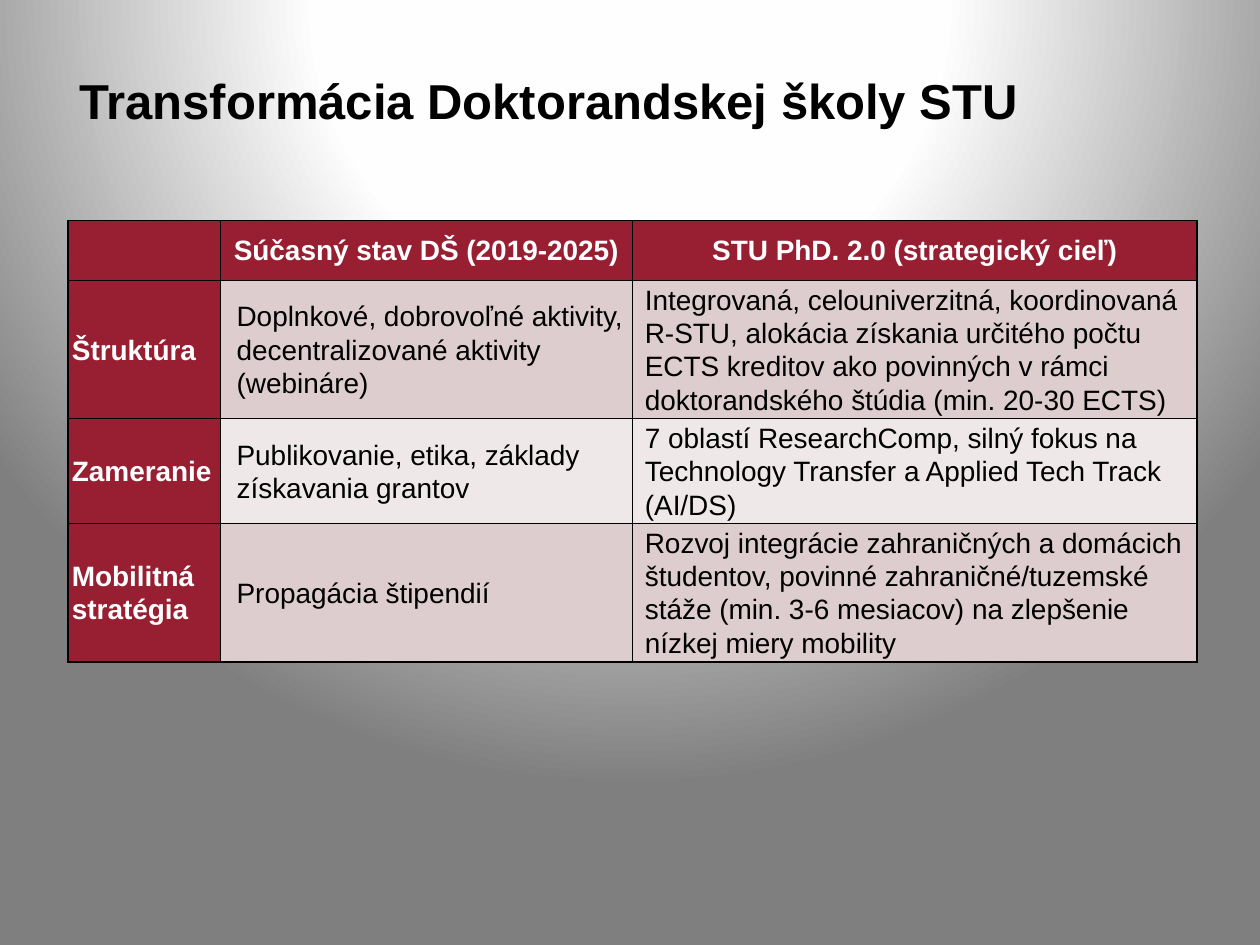
"""Build a slide comparing the current and the planned doctoral school in a table."""
import pptx
import pptx.dml.color
import pptx.enum.text
import pptx.oxml
import pptx.oxml.ns
import pptx.util

Cm, Pt = pptx.util.Cm, pptx.util.Pt
RGB = pptx.dml.color.RGBColor.from_string
ALIGN = pptx.enum.text.PP_ALIGN
MIDDLE = pptx.enum.text.MSO_ANCHOR.MIDDLE

TITLE = "Transformácia Doktorandskej školy STU"
ROWS = [
    ("", "Súčasný stav DŠ (2019-2025)", "STU PhD. 2.0 (strategický cieľ)"),
    ("Štruktúra",
     "Doplnkové, dobrovoľné aktivity, decentralizované aktivity (webináre)",
     "Integrovaná, celouniverzitná, koordinovaná R-STU, alokácia získania určitého počtu "
     "ECTS kreditov ako povinných v rámci doktorandského štúdia (min. 20-30 ECTS)"),
    ("Zameranie",
     "Publikovanie, etika, základy získavania grantov",
     "7 oblastí ResearchComp, silný fokus na Technology Transfer a Applied Tech Track (AI/DS)"),
    ("Mobilitná stratégia",
     "Propagácia štipendií",
     "Rozvoj integrácie zahraničných a domácich študentov, povinné zahraničné/tuzemské "
     "stáže (min. 3-6 mesiacov) na zlepšenie nízkej miery mobility"),
]
COL_WIDTHS = [3.07, 8.31, 11.38]
ROW_HEIGHTS = [1.2, 2.79, 2.11, 2.79]
SIDE_MARGINS = [0.08, 0.08, 0]

THEME = {
    "font": "Arial", "title_size": 28, "table_size": 16,
    "text": "000000", "head_text": "FFFFFF", "head": "981E32",
    "bands": ["DDCDCE", "EFE8E8"], "border": "000000",
    "backdrop": [(0, "FFFFFF"), (40, "FEFEFE"), (100, "7F7F7F")],
}
HEAD_PARA = {"alignment": ALIGN.CENTER, "space_before": Pt(6), "space_after": Pt(6)}
BODY_PARA = {"alignment": ALIGN.LEFT, "line_spacing": 1.07, "space_after": Pt(8)}
NS = pptx.oxml.ns.nsdecls("a")


def apply(obj, values):
    """Set each attribute in values on obj."""
    for name, value in values.items():
        setattr(obj, name, value)


def format_font(p, size, color, bold):
    """Give a paragraph's runs the theme font."""
    for r in p.runs:
        apply(r.font, {"name": THEME["font"], "size": Pt(size), "bold": bold})
        r.font.color.rgb = RGB(color)


def set_background(s):
    """Fill the slide with a radial gradient centred above it."""
    s.background.fill.solid()
    solid = s.element.find(".//" + pptx.oxml.ns.qn("p:bgPr"))[0]
    stops = "".join(f'<a:gs pos="{pos * 1000}"><a:srgbClr val="{color}"/></a:gs>'
                    for pos, color in THEME["backdrop"])
    solid.getparent().replace(solid, pptx.oxml.parse_xml(
        f'<a:gradFill {NS} rotWithShape="1"><a:gsLst>{stops}</a:gsLst><a:path path="circle">'
        '<a:fillToRect l="50000" t="-80000" r="50000" b="180000"/></a:path></a:gradFill>'))


def add_title(s):
    """Place and format the title placeholder."""
    sp = s.shapes.title
    apply(sp, {"left": Cm(1.6), "top": Cm(0.76), "width": Cm(22.53), "height": Cm(2.51)})
    tf = sp.text_frame
    tf.text = TITLE
    apply(tf, {"margin_left": 0, "vertical_anchor": MIDDLE, "word_wrap": True,
               "auto_size": pptx.enum.text.MSO_AUTO_SIZE.NONE})
    p = tf.paragraphs[0]
    p.alignment = ALIGN.LEFT
    format_font(p, THEME["title_size"], THEME["text"], True)


def format_cell(cell, text, row, col):
    """Write one cell with its borders, fill and text format."""
    is_head = row == 0 or col == 0
    tc_pr = cell._tc.get_or_add_tcPr()
    for side in "LRTB":
        tc_pr.append(pptx.oxml.parse_xml(
            f'<a:ln{side} {NS} w="12700"><a:solidFill><a:srgbClr val="{THEME["border"]}"/>'
            f'</a:solidFill></a:ln{side}>'))
    cell.fill.solid()
    band = THEME["bands"][(row - 1) % 2]
    cell.fill.fore_color.rgb = RGB(THEME["head"] if is_head else band)
    side = Cm(SIDE_MARGINS[col])
    apply(cell, {"text": text, "vertical_anchor": MIDDLE, "margin_left": side,
                 "margin_right": side, "margin_top": Cm(0.05), "margin_bottom": Cm(0.05)})
    p = cell.text_frame.paragraphs[0]
    apply(p, HEAD_PARA if row == 0 else BODY_PARA)
    if not is_head:
        p._p.get_or_add_pPr().set("marL", str(Cm(0.25)))
    format_font(p, THEME["table_size"], THEME["head_text" if is_head else "text"], is_head)


def add_comparison(s):
    """Add the comparison table."""
    table = s.shapes.add_table(len(ROWS), len(COL_WIDTHS), Cm(1.37), Cm(4.45),
                               Cm(sum(COL_WIDTHS)), Cm(sum(ROW_HEIGHTS))).table
    for column, width in zip(table.columns, COL_WIDTHS):
        column.width = Cm(width)
    for row, height in zip(table.rows, ROW_HEIGHTS):
        row.height = Cm(height)
    for i, texts in enumerate(ROWS):
        for j, text in enumerate(texts):
            format_cell(table.cell(i, j), text, i, j)


def main():
    """Create and save the presentation."""
    prs = pptx.Presentation()
    apply(prs, {"slide_width": Cm(25.4), "slide_height": Cm(19.05)})
    s = prs.slides.add_slide(prs.slide_layouts[5])
    set_background(s)
    add_title(s)
    add_comparison(s)
    prs.save("out.pptx")


if __name__ == "__main__":
    main()
